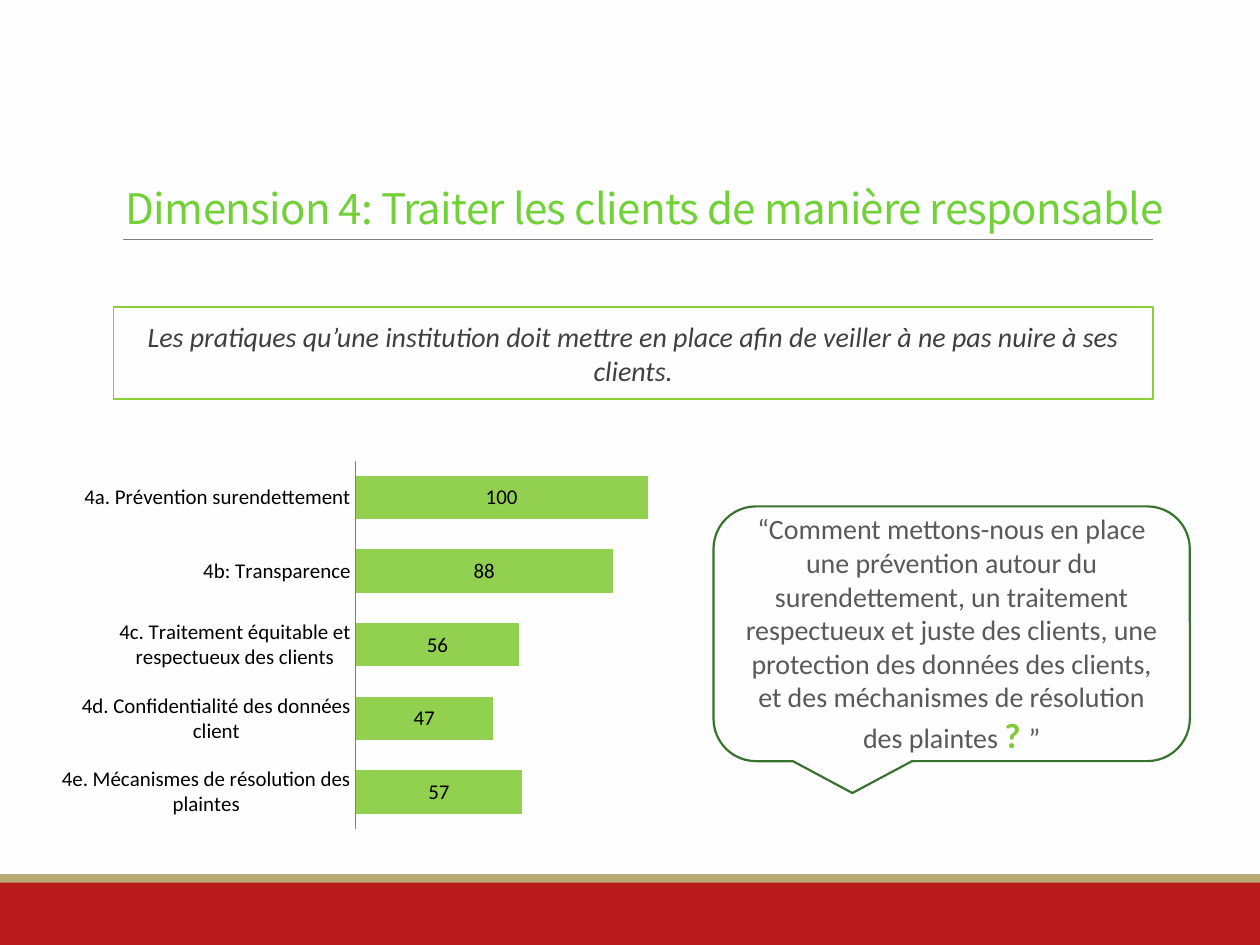
from lxml import etree
from pptx import Presentation
from pptx.chart.data import CategoryChartData
from pptx.dml.color import RGBColor
from pptx.enum.chart import XL_CHART_TYPE, XL_LABEL_POSITION, XL_TICK_MARK
from pptx.enum.shapes import MSO_CONNECTOR, MSO_SHAPE
from pptx.enum.text import MSO_ANCHOR, PP_ALIGN
from pptx.oxml import parse_xml
from pptx.oxml.ns import nsdecls, qn
from pptx.util import Pt

PAPER = RGBColor(0xFE, 0xFD, 0xFF)
RED = RGBColor(0xB9, 0x1A, 0x1B)
SAND = RGBColor(0xB8, 0xAA, 0x76)
GREY = RGBColor(0x80, 0x80, 0x80)
BLACK = RGBColor(0, 0, 0)
TITLE_GREEN = RGBColor(0x71, 0xD1, 0x36)
BOX_GREEN = RGBColor(0x8A, 0xD1, 0x36)
DARK_GREEN = RGBColor(0x38, 0x73, 0x2E)
MARK_GREEN = RGBColor(0x83, 0xC9, 0x35)
BAR_GREEN = RGBColor(0x92, 0xD0, 0x50)
DARK_TEXT = RGBColor(0x40, 0x40, 0x40)
MID_TEXT = RGBColor(0x59, 0x59, 0x59)

SCORES = {
    "4a. Prévention surendettement": 100,
    "4b: Transparence": 88,
    "4c. Traitement équitable et respectueux des clients": 56,
    "4d. Confidentialité des données client": 47,
    "4e. Mécanismes de résolution des plaintes": 57,
}


class SlideBuilder:
    body_font = "Calibri"
    title_font = "Noto Sans CJK KR"

    def __init__(self, slide):
        self.s = slide
        slide.background.fill.solid()
        slide.background.fill.fore_color.rgb = PAPER

    def shape(self, kind, x, y, w, h, fill=None, line=None, width=1):
        sp = self.s.shapes.add_shape(kind, Pt(x), Pt(y), Pt(w), Pt(h))
        sp.shadow.inherit = False
        if fill is None:
            sp.fill.background()
        else:
            sp.fill.solid()
            sp.fill.fore_color.rgb = fill
        if line is None:
            sp.line.fill.background()
        else:
            sp.line.color.rgb = line
            sp.line.width = Pt(width)
        return sp

    def rule(self, x1, x2, y):
        cx = self.s.shapes.add_connector(
            MSO_CONNECTOR.STRAIGHT, Pt(x1), Pt(y), Pt(x2), Pt(y))
        cx.line.color.rgb = GREY
        cx.line.width = Pt(0.5)
        etree.SubElement(cx._element.spPr, qn("a:effectLst"))

    def title(self, text, x, y, w, h):
        tf = self.s.shapes.add_textbox(Pt(x), Pt(y), Pt(w), Pt(h)).text_frame
        tf.word_wrap = True
        tf.vertical_anchor = MSO_ANCHOR.BOTTOM
        p = tf.paragraphs[0]
        p.line_spacing = 0.85
        r = p.add_run()
        r.text = text
        self.style(r.font, 24, TITLE_GREEN, self.title_font)
        r.font._element.set("spc", "-40")

    def style(self, font, size, color, name=body_font):
        font.name, font.size = name, Pt(size)
        font.color.rgb = color

    def centred_text(self, sp, *runs):
        """Centre runs of (text, size, colour) in a shape."""
        tf = sp.text_frame
        tf.word_wrap = True
        tf.vertical_anchor = MSO_ANCHOR.MIDDLE
        p = tf.paragraphs[0]
        p.alignment = PP_ALIGN.CENTER
        for text, size, color in runs:
            r = p.add_run()
            r.text = text
            self.style(r.font, size, color)
        return p

    def bar_chart(self, scores, x, y, w, h, plot):
        data = CategoryChartData(number_format="0")
        data.categories = list(scores)
        data.add_series("Series 1", list(scores.values()))
        chart = self.s.shapes.add_chart(
            XL_CHART_TYPE.BAR_CLUSTERED, Pt(x), Pt(y), Pt(w), Pt(h), data).chart
        chart.has_legend = chart.has_title = False
        self.style(chart.font, 12, BLACK)

        # Axes
        cat, val = chart.category_axis, chart.value_axis
        cat.reverse_order = True
        cat.major_tick_mark = XL_TICK_MARK.NONE
        cat.format.line.color.rgb = GREY
        val.minimum_scale, val.maximum_scale = 0, 100
        val.has_major_gridlines = False
        val.visible = False

        # Bars and labels
        bars = chart.plots[0]
        bars.gap_width = 70
        bars.vary_by_categories = False
        fill = bars.series[0].format.fill
        fill.solid()
        fill.fore_color.rgb = BAR_GREEN
        bars.has_data_labels = True
        labels = bars.data_labels
        labels.show_value = True
        labels.position = XL_LABEL_POSITION.CENTER
        labels.number_format, labels.number_format_is_linked = "0", False

        # Fixed inner plot area
        area = chart._chartSpace.chart.plotArea
        for old in area.findall(qn("c:layout")):
            area.remove(old)
        sizes = "".join(f'<c:{k} val="{v}"/>' for k, v in zip("xywh", plot))
        area.insert(0, parse_xml(
            f'<c:layout {nsdecls("c")}><c:manualLayout>'
            '<c:layoutTarget val="inner"/><c:xMode val="edge"/>'
            f'<c:yMode val="edge"/>{sizes}</c:manualLayout></c:layout>'))


def main():
    prs = Presentation()
    prs.slide_width, prs.slide_height = Pt(720), Pt(540)
    s = SlideBuilder(prs.slides.add_slide(prs.slide_layouts[6]))

    # Footer bands and title rule
    s.shape(MSO_SHAPE.RECTANGLE, 0, 504, 720, 36, RED)
    s.shape(MSO_SHAPE.RECTANGLE, 0, 499.5, 720, 5, SAND)
    s.rule(70.5, 659, 136.8)

    # Definition
    box = s.shape(MSO_SHAPE.RECTANGLE, 64.8, 175.6, 594, 52.6, line=BOX_GREEN)
    p = s.centred_text(box, (
        "Les pratiques qu’une institution doit mettre en place afin de "
        "veiller à ne pas nuire à ses clients.", 16, DARK_TEXT))
    p.font.italic = True

    # Title
    s.title("Dimension 4: Traiter les clients de manière responsable",
            64.8, 22.3, 654.5, 114.5)

    # Guiding question
    callout = s.shape(MSO_SHAPE.ROUNDED_RECTANGULAR_CALLOUT,
                      407.7, 289.4, 272.2, 145.6, PAPER, DARK_GREEN, 1.25)
    p = s.centred_text(
        callout,
        ("“Comment mettons-nous en place une prévention autour du "
         "surendettement, un traitement respectueux et juste des clients, "
         "une protection des données des clients, et des méchanismes de "
         "résolution des plaintes ", 16, MID_TEXT),
        ("? ", 20, MARK_GREEN),
        ("”", 16, MID_TEXT))
    p.runs[1].font.bold = True

    # Scores by practice
    s.bar_chart(SCORES, 35.3, 214.6, 334.8, 270, (0.5, 0.18, 0.5, 0.78))

    prs.save("out.pptx")


if __name__ == "__main__":
    main()
